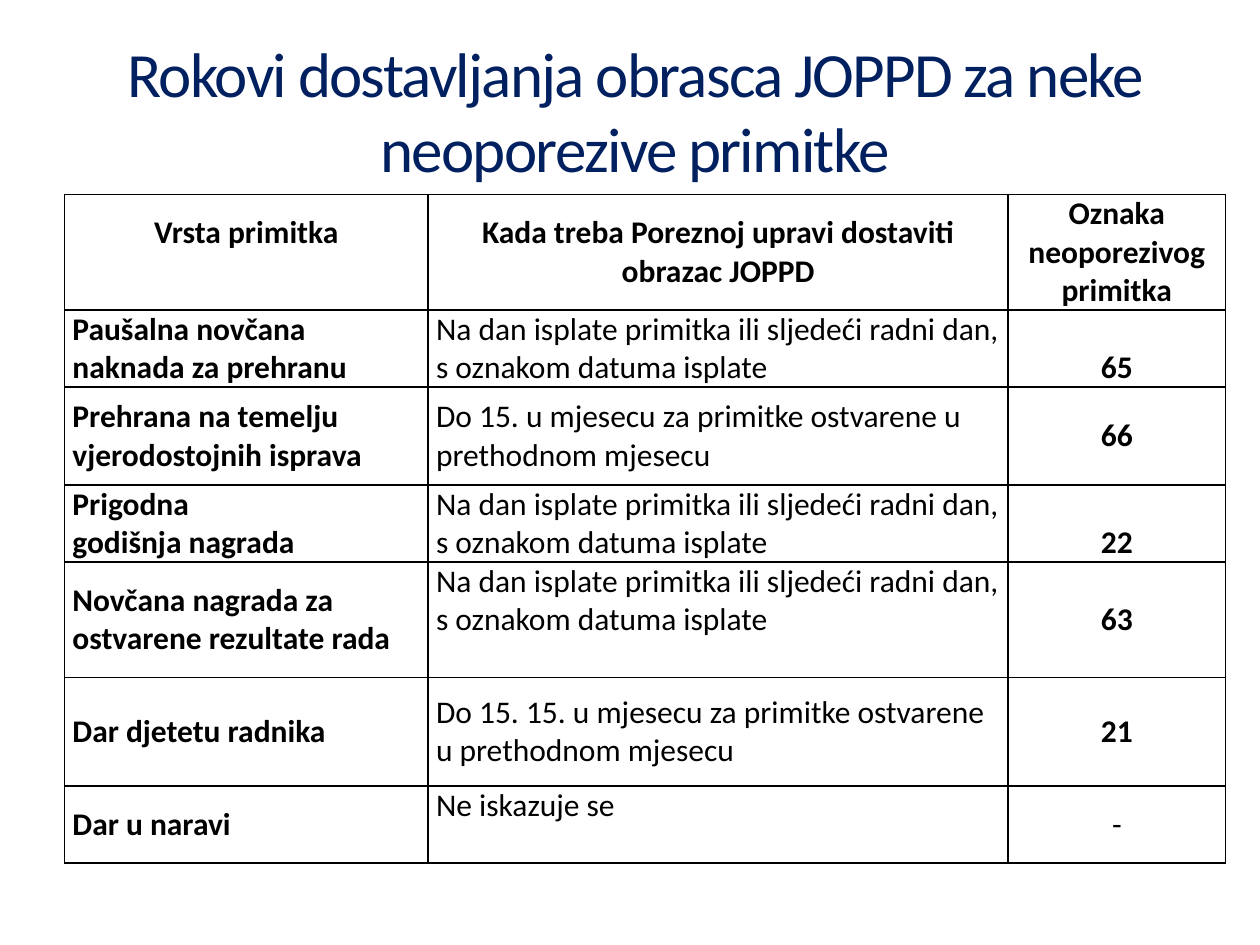
from dataclasses import dataclass

from lxml.etree import SubElement
from pptx import Presentation
from pptx.dml.color import RGBColor
from pptx.enum.text import MSO_ANCHOR, MSO_AUTO_SIZE, PP_ALIGN
from pptx.oxml.ns import qn
from pptx.util import Pt

TOP, MID, LOW = MSO_ANCHOR.TOP, MSO_ANCHOR.MIDDLE, MSO_ANCHOR.BOTTOM


@dataclass(frozen=True)
class Theme:
    font: str = "Calibri"
    title: RGBColor = RGBColor(0x00, 0x20, 0x60)
    ink: RGBColor = RGBColor(0, 0, 0)
    title_size: int = 36
    body_size: int = 18
    border: int = 1
    inset: float = 4.5


class Deck:
    def __init__(self, theme, slide):
        self.theme = theme
        self.slide = slide

    def style(self, frame, size, color, align, bold=False):
        for para in frame.paragraphs:
            para.alignment = align
            for run in para.runs:
                font = run.font
                font.name, font.size, font.bold = self.theme.font, Pt(size), bold
                font.color.rgb = color

    def title(self, text, left, top, width, height):
        box = self.slide.shapes.title
        box.left, box.top, box.width, box.height = map(Pt, (left, top, width, height))
        frame = box.text_frame
        frame.text = text
        frame.word_wrap = True
        frame.auto_size = MSO_AUTO_SIZE.NONE
        frame.vertical_anchor = MID
        self.style(frame, self.theme.title_size, self.theme.title, PP_ALIGN.CENTER)
        for run in frame.paragraphs[0].runs:
            run.font._element.set("spc", "-100")

    def edge(self, cell):
        """Draw a thin line on all four sides of a cell."""
        props = cell._tc.get_or_add_tcPr()
        for order, side in enumerate(("lnL", "lnR", "lnT", "lnB")):
            line = SubElement(props, qn(f"a:{side}"), w=str(Pt(self.theme.border)))
            fill = SubElement(line, qn("a:solidFill"))
            SubElement(fill, qn("a:srgbClr"), val=str(self.theme.ink))
            props.insert(order, line)

    def cell(self, cell, text, align, bold, anchor):
        cell.text_frame.text = text
        cell.vertical_anchor = anchor
        cell.margin_left = cell.margin_right = Pt(self.theme.inset)
        cell.margin_top = cell.margin_bottom = 0
        cell.fill.background()
        self.edge(cell)
        self.style(cell.text_frame, self.theme.body_size, self.theme.ink, align, bold)

    def table(self, heads, rows, left, top, widths, heights):
        """Each row holds three texts, then the anchors of its last two cells."""
        shape = self.slide.shapes.add_table(
            len(heights), len(widths), Pt(left), Pt(top),
            Pt(sum(widths)), Pt(sum(heights)))
        grid = shape.table
        grid.first_row = grid.horz_banding = False
        for col, width in zip(grid.columns, widths):
            col.width = Pt(width)
        for row, height in zip(grid.rows, heights):
            row.height = Pt(height)
        for c, head in enumerate(heads):
            self.cell(grid.cell(0, c), head, PP_ALIGN.CENTER, True, MID)
        for r, (kind, due, code, due_at, code_at) in enumerate(rows, 1):
            self.cell(grid.cell(r, 0), kind, PP_ALIGN.LEFT, True, MID)
            self.cell(grid.cell(r, 1), due, PP_ALIGN.LEFT, False, due_at)
            self.cell(grid.cell(r, 2), code, PP_ALIGN.CENTER, code.isdigit(), code_at)
        return grid


HEADS = ("Vrsta primitka", "Kada treba Poreznoj upravi dostaviti obrazac JOPPD",
         "Oznaka neoporezivog primitka")
PAYDAY = "Na dan isplate primitka ili sljedeći radni dan, s oznakom datuma isplate"
MONTH = "u mjesecu za primitke ostvarene u prethodnom mjesecu"
ROWS = (
    ("Paušalna novčana naknada za prehranu", PAYDAY, "65", MID, LOW),
    ("Prehrana na temelju vjerodostojnih isprava", f"Do 15. {MONTH}", "66", MID, MID),
    ("Prigodna\ngodišnja nagrada", PAYDAY, "22", MID, LOW),
    ("Novčana nagrada za ostvarene rezultate rada", PAYDAY, "63", TOP, MID),
    ("Dar djetetu radnika", f"Do 15. 15. {MONTH}", "21", MID, MID),
    ("Dar u naravi", "Ne iskazuje se", "-", TOP, MID),
)


def main():
    show = Presentation()
    show.slide_width, show.slide_height = Pt(720), Pt(540)
    deck = Deck(Theme(), show.slides.add_slide(show.slide_layouts[5]))
    deck.title("Rokovi dostavljanja obrasca JOPPD za neke neoporezive primitke",
               36.7, 26, 652.3, 73.4)
    grid = deck.table(HEADS, ROWS, 36.9, 111.2, (207.8, 331.4, 124.2),
                      (66, 44, 56, 44, 66, 62, 44))
    grid.cell(0, 0).margin_bottom = Pt(22)  # lifts the first heading by half a line
    show.save("out.pptx")


if __name__ == "__main__":
    main()
